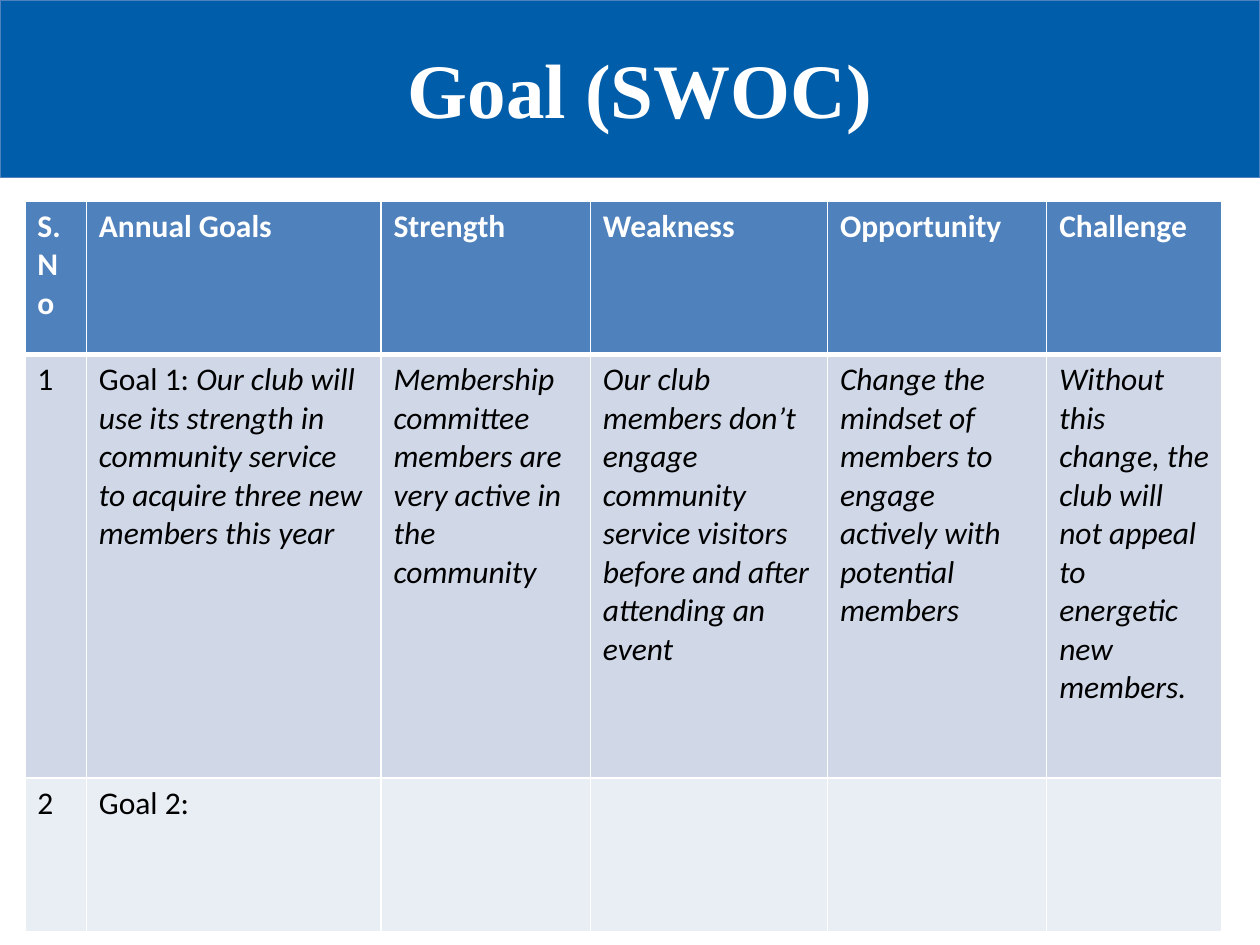
import pptx
import pptx.dml.color
import pptx.enum.shapes
import pptx.enum.text
import pptx.oxml
import pptx.oxml.ns
import pptx.util
from pptx.util import Cm


def color(hex_value):
    return pptx.dml.color.RGBColor.from_string(hex_value)


def add_border(cell, side, points):
    """Add a white cell border; call before the cell's fill is set."""
    cell._tc.get_or_add_tcPr().append(pptx.oxml.parse_xml(
        f'<a:{side} {pptx.oxml.ns.nsdecls("a")} w="{points * 12700}">'
        f'<a:solidFill><a:srgbClr val="FFFFFF"/></a:solidFill></a:{side}>'))


deck = pptx.Presentation()
deck.slide_width, deck.slide_height = Cm(25.4), Cm(19.05)
slide = deck.slides.add_slide(deck.slide_layouts[6])

# Header band
band = slide.shapes.add_shape(
    pptx.enum.shapes.MSO_SHAPE.RECTANGLE, 0, 0, Cm(25.4), Cm(3.58))
band.shadow.inherit = False
band.fill.solid()
band.fill.fore_color.rgb = color("005DAA")
band.line.color.rgb = color("4F81BD")
band.line.width = pptx.util.Pt(0.75)

# Title
title = slide.shapes.add_textbox(Cm(0.94), Cm(0.97), Cm(23.93), Cm(2.08)).text_frame
title.word_wrap = True
title.margin_top = Cm(0.22)
title.text = "Goal (SWOC)"
heading = title.paragraphs[0]
heading.alignment = pptx.enum.text.PP_ALIGN.CENTER
heading.line_spacing = 0.8
heading.font.name = "Times New Roman"
heading.font.size = pptx.util.Pt(44)
heading.font.bold = True
heading.font.color.rgb = color("FFFFFF")

# SWOC table: each cell is a list of (text, italic) runs
headers = ["S.No", "Annual Goals", "Strength", "Weakness", "Opportunity", "Challenge"]
analysis = [
    "Membership committee members are very active in the community",
    "Our club members don’t engage community service visitors before and after "
    "attending an event",
    "Change the mindset of members to engage actively with potential members",
    "Without this change, the club will not appeal to energetic new members.",
]
first_goal = [
    ("Goal 1: ", False),
    ("Our club will use its strength in community service to acquire three new "
     "members this year", True),
]
rows = [
    [[(header, False)] for header in headers],
    [[("1", False)], first_goal] + [[(entry, True)] for entry in analysis],
    [[("2", False)], [("Goal 2:", False)], [], [], [], []],
]
column_widths = [1.24, 5.94, 4.22, 4.78, 4.42, 3.53]
row_heights = [3.1, 8.53, 3.1]
row_fills = ["4F81BD", "D0D8E8", "E9EDF4"]

swoc = slide.shapes.add_table(
    len(rows), len(headers), Cm(0.5), Cm(4.05),
    Cm(sum(column_widths)), Cm(sum(row_heights))).table
for column, width in zip(swoc.columns, column_widths):
    column.width = Cm(width)

for r, entries in enumerate(rows):
    swoc.rows[r].height = Cm(row_heights[r])
    for c, entry in enumerate(entries):
        cell = swoc.cell(r, c)
        add_border(cell, "lnL", 1)
        add_border(cell, "lnR", 1)
        add_border(cell, "lnT", 3 if r == 1 else 1)
        add_border(cell, "lnB", 3 if r == 0 else 1)
        cell.fill.solid()
        cell.fill.fore_color.rgb = color(row_fills[r])
        for text, italic in entry:
            run = cell.text_frame.paragraphs[0].add_run()
            run.text = text
            run.font.name = "Calibri"
            run.font.size = pptx.util.Pt(18)
            run.font.bold = r == 0
            run.font.italic = italic
            run.font.color.rgb = color("FFFFFF" if r == 0 else "000000")

deck.save("out.pptx")
